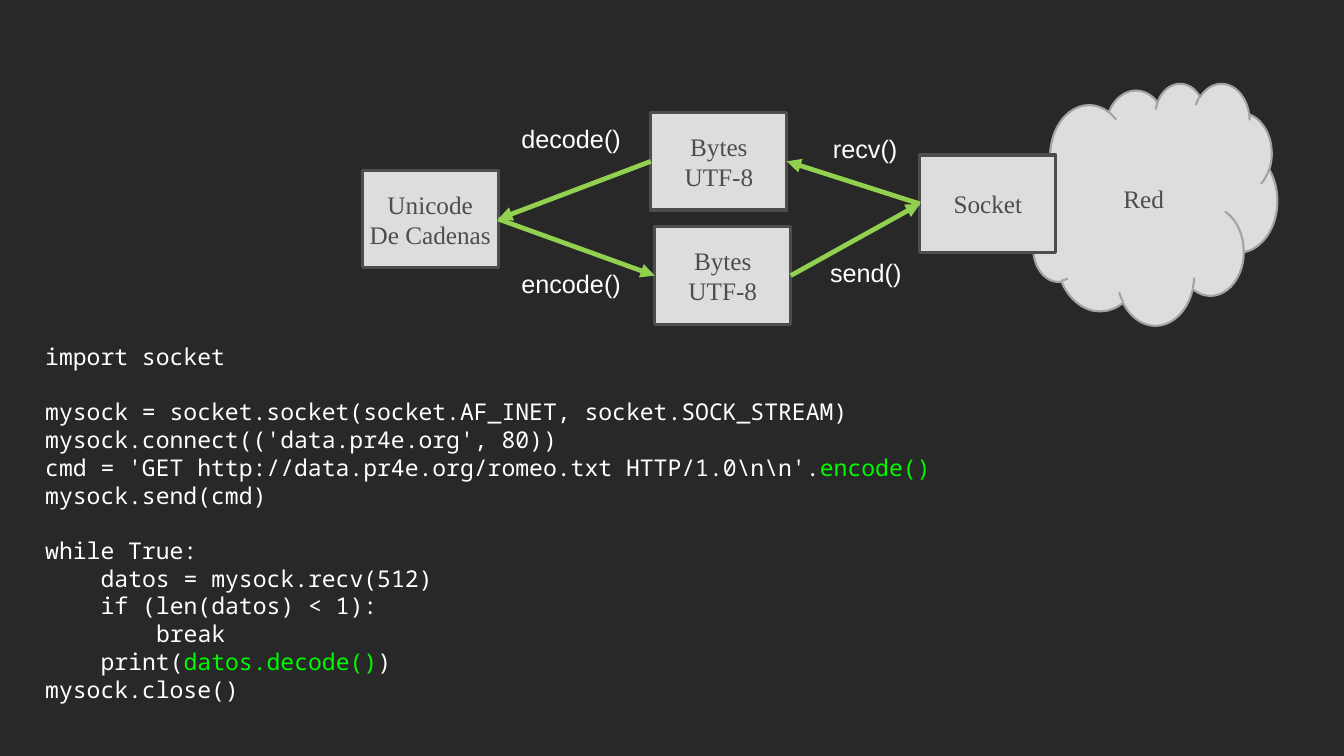
from pptx import Presentation
from pptx.dml.color import RGBColor
from pptx.enum.shapes import MSO_CONNECTOR as Link, MSO_SHAPE as Geo
from pptx.enum.text import MSO_ANCHOR as Anchor, MSO_AUTO_SIZE as Fit, PP_ALIGN as Align
from pptx.oxml.ns import qn
from pptx.util import Cm, Pt
from lxml.etree import SubElement

DARK = RGBColor(0x28, 0x28, 0x28)
PALE = RGBColor(0xDD, 0xDD, 0xDD)
GRAY = RGBColor(0xA3, 0xA3, 0xA3)
SLATE = RGBColor(0x4D, 0x4D, 0x4D)
WHITE = RGBColor(0xFF, 0xFF, 0xFF)
LIME = RGBColor(0x92, 0xD0, 0x50)
GREEN = RGBColor(0x00, 0xFA, 0x00)

BOX_W, BOX_H = 4.57, 3.28
LEFT, RIGHT = 1, 3
LEAD = Pt(26.4)
STEP = Pt(52.8)

# Each line: indent level, starts a new block, plain and green parts in turn
CODE = [
    (0, False, ["import socket"]),
    (0, True, ["mysock = socket.socket(socket.AF_INET, socket.SOCK_STREAM)"]),
    (0, False, ["mysock.connect(('data.pr4e.org', 80))"]),
    (0, False, [r"cmd = 'GET http://data.pr4e.org/romeo.txt HTTP/1.0\n\n'.", "encode()"]),
    (0, False, ["mysock.send(cmd)"]),
    (0, True, ["while True:"]),
    (1, False, ["datos = mysock.recv(512)"]),
    (1, False, ["if (len(datos) < 1):"]),
    (2, False, ["break"]),
    (1, False, ["print(", "datos.decode()", ")"]),
    (0, False, ["mysock.close()"]),
]


def write(para, text, font="Arial", size=24, color=WHITE, align=Align.LEFT):
    para.alignment = align
    run = para.add_run()
    run.text = text
    run.font.name = font
    run.font.size = Pt(size)
    run.font.color.rgb = color


def next_para(frame, first):
    return frame.paragraphs[0] if first else frame.add_paragraph()


def add_node(slide, geo, lines, x, y, w=BOX_W, h=BOX_H, edge=SLATE, width=3):
    node = slide.shapes.add_shape(geo, Cm(x), Cm(y), Cm(w), Cm(h))
    node.shadow.inherit = False
    node.fill.solid()
    node.fill.fore_color.rgb = PALE
    node.line.color.rgb = edge
    node.line.width = Pt(width)
    frame = node.text_frame
    frame.word_wrap = False
    frame.vertical_anchor = Anchor.MIDDLE
    for i, line in enumerate(lines):
        write(next_para(frame, i == 0), line, font="Times New Roman",
              color=SLATE, align=Align.CENTER)
    return node


def add_arrow(slide, start, side, end, target):
    arrow = slide.shapes.add_connector(Link.STRAIGHT, 0, 0, 0, 0)
    arrow.begin_connect(start, side)
    arrow.end_connect(end, target)
    arrow.line.color.rgb = LIME
    arrow.line.width = Pt(4.5)
    SubElement(arrow.line._get_or_add_ln(), qn("a:tailEnd"), type="triangle")
    SubElement(arrow._element.spPr, qn("a:effectLst"))


def add_frame(slide, x, y, w, h, wrap):
    frame = slide.shapes.add_textbox(Cm(x), Cm(y), Cm(w), Cm(h)).text_frame
    frame.word_wrap = wrap
    frame.auto_size = Fit.SHAPE_TO_FIT_TEXT
    return frame


def add_label(slide, text, x, y, w):
    write(add_frame(slide, x, y, w, 1.27, False).paragraphs[0], text)


def add_code(slide, x, y, w, h):
    frame = add_frame(slide, x, y, w, h, True)
    for i, (level, block, parts) in enumerate(CODE):
        para = next_para(frame, i == 0)
        para.line_spacing = LEAD
        para.space_before = LEAD if block else Pt(0)
        props = para._p.get_or_add_pPr()
        props.set("marL", str(level * STEP))
        props.set("indent", "0")
        for j, part in enumerate(parts):
            write(para, part, font="Noto Sans Mono", size=22,
                  color=GREEN if j % 2 else WHITE)


def main():
    deck = Presentation()
    deck.slide_width, deck.slide_height = Cm(45.16), Cm(25.4)
    slide = deck.slides.add_slide(deck.slide_layouts[6])
    slide.background.fill.solid()
    slide.background.fill.fore_color.rgb = DARK

    add_node(slide, Geo.CLOUD, ["Red"], 34.54, 2.79, 8.38, 8.13, edge=GRAY, width=2)
    socket = add_node(slide, Geo.RECTANGLE, ["Socket"], 30.91, 5.21)
    inbound = add_node(slide, Geo.RECTANGLE, ["Bytes", "UTF-8"], 21.87, 3.78)
    unicode = add_node(slide, Geo.RECTANGLE, ["Unicode", "De Cadenas"], 12.17, 5.72)
    outbound = add_node(slide, Geo.RECTANGLE, ["Bytes", "UTF-8"], 22, 7.62)

    add_arrow(slide, unicode, RIGHT, outbound, LEFT)
    add_arrow(slide, socket, LEFT, inbound, RIGHT)
    add_arrow(slide, outbound, RIGHT, socket, LEFT)
    add_arrow(slide, inbound, LEFT, unicode, RIGHT)

    add_label(slide, "recv()", 27.74, 4.37, 2.69)
    add_label(slide, "decode()", 17.27, 4.01, 3.89)
    add_label(slide, "encode()", 17.27, 8.89, 3.89)
    add_label(slide, "send()", 27.64, 8.53, 2.95)
    add_code(slide, 1.27, 11.38, 31.6, 12.47)
    deck.save("out.pptx")


if __name__ == "__main__":
    main()
